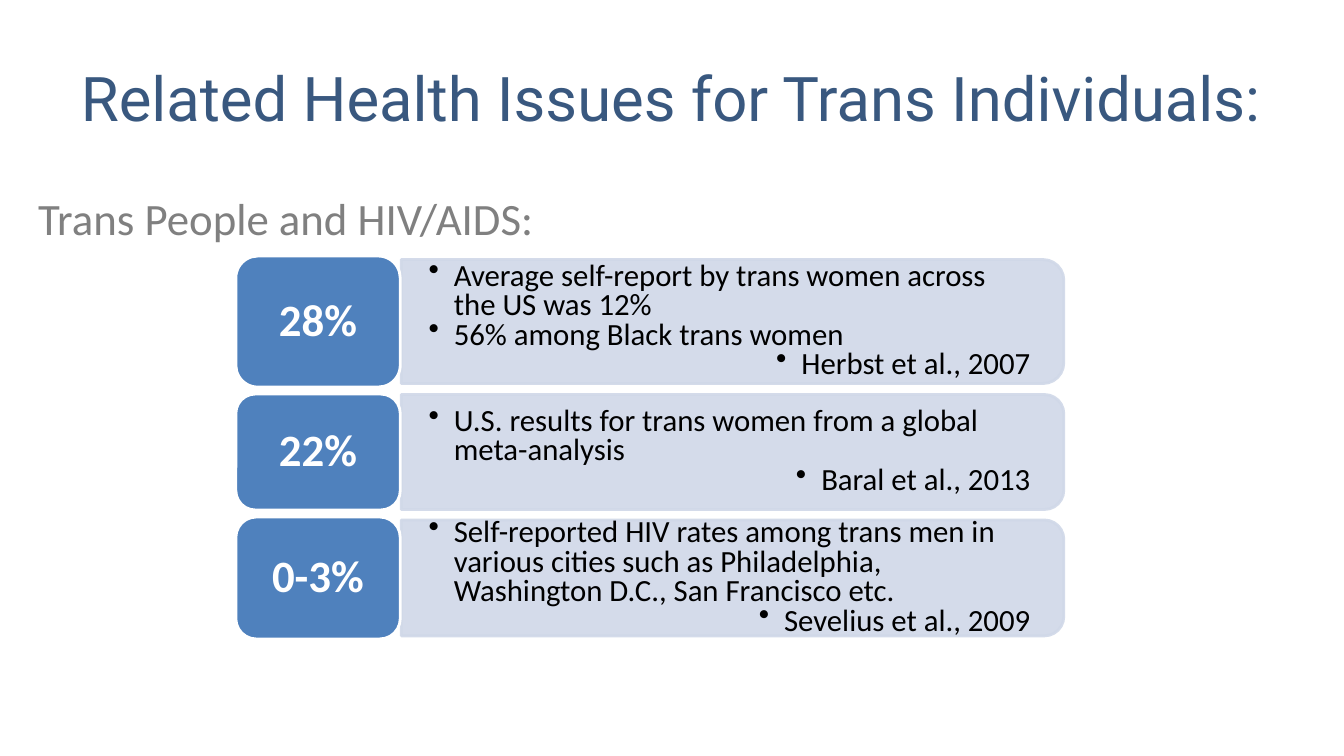
from dataclasses import dataclass

import lxml.etree
import pptx
import pptx.dml.color
import pptx.enum.shapes
import pptx.enum.text
import pptx.oxml.ns
import pptx.shapes.autoshape
import pptx.slide
import pptx.text.text
import pptx.util

Align = pptx.enum.text.PP_ALIGN
Anchor = pptx.enum.text.MSO_ANCHOR
Preset = pptx.enum.shapes.MSO_SHAPE
SLIDE_WIDTH = pptx.util.Inches(13.33)
SLIDE_HEIGHT = pptx.util.Inches(7.5)


@dataclass(frozen=True)
class Theme:
    heading_font: str = "Roboto"
    body_font: str = "Calibri"
    heading_size: int = 44
    large_size: int = 32
    finding_size: int = 22
    heading: str = "39587F"
    topic: str = "808080"
    rate_fill: str = "4F81BD"
    rate_text: str = "FFFFFF"
    panel: str = "D0D8E8"
    finding: str = "000000"
    outline_width: int = 2
    panel_opacity: int = 90


@dataclass(frozen=True)
class Area:
    """Percentages of the slide's width and height."""

    left: float
    top: float
    width: float
    height: float

    def emu(self) -> tuple[int, int, int, int]:
        return (across(self.left), down(self.top), across(self.width), down(self.height))


@dataclass(frozen=True)
class Statistic:
    rate: str
    findings: tuple[str, ...]
    citation: str
    rate_height: float
    panel_height: float


THEME = Theme()
HEADING_AREA = Area(2.1, 3.33, 95.72, 18.93)
TOPIC_AREA = Area(2.1, 24.53, 95.72, 60.13)
RATE_LEFT, RATE_WIDTH = 17.55, 12.23
PANEL_LEFT, PANEL_WIDTH = 29.86, 49.29
FINDINGS_WIDTH, FINDINGS_TRIM = 48.84, 1.5
FIRST_ROW, ROW_GAP = 33.87, 0.93
INSET_ACROSS, INSET_DOWN, BULLET_INDENT = 2.03, 1.87, 1.88
STATISTICS = (
    Statistic(
        "28%",
        ("Average self-report by trans women across the US was 12%", "56% among Black trans women"),
        "Herbst et al., 2007", 17.33, 16.4,
    ),
    Statistic(
        "22%",
        ("U.S. results for trans women from a global meta-analysis",),
        "Baral et al., 2013", 15.33, 15.2,
    ),
    Statistic(
        "0-3%",
        ("Self-reported HIV rates among trans men in various cities such as "
         "Philadelphia, Washington D.C., San Francisco etc.",),
        "Sevelius et al., 2009", 16.13, 15.33,
    ),
)


def across(percent: float) -> int:
    return round(SLIDE_WIDTH * percent / 100)


def down(percent: float) -> int:
    return round(SLIDE_HEIGHT * percent / 100)


def rgb(colour: str) -> pptx.dml.color.RGBColor:
    return pptx.dml.color.RGBColor.from_string(colour)


def style(paragraph: pptx.text.text._Paragraph, font: str, size: int, colour: str,
          bold: bool = False) -> None:
    for run in paragraph.runs:
        run.font.name = font
        run.font.size = pptx.util.Pt(size)
        run.font.color.rgb = rgb(colour)
        run.font.bold = bold


def add_text(slide: pptx.slide.Slide, area: Area, anchor: Anchor) -> pptx.text.text.TextFrame:
    frame = slide.shapes.add_textbox(*area.emu()).text_frame
    frame.word_wrap = True
    frame.vertical_anchor = anchor
    return frame


def add_block(slide: pptx.slide.Slide, preset: Preset, bounds: tuple[int, int, int, int],
              fill: str, outline: str) -> pptx.shapes.autoshape.Shape:
    block = slide.shapes.add_shape(preset, *bounds)
    block.shadow.inherit = False
    block.fill.solid()
    block.fill.fore_color.rgb = rgb(fill)
    block.line.color.rgb = rgb(outline)
    block.line.width = pptx.util.Pt(THEME.outline_width)
    return block


def add_panel(slide: pptx.slide.Slide, area: Area) -> None:
    left, top, width, height = area.emu()
    shift = (width - height) // 2
    panel = add_block(slide, Preset.ROUND_2_SAME_RECTANGLE,
                      (left + shift, top - shift, height, width), THEME.panel, THEME.panel)
    panel.rotation = 90
    qn = pptx.oxml.ns.qn
    for colour in panel._element.spPr.iter(qn("a:srgbClr")):
        lxml.etree.SubElement(colour, qn("a:alpha"), val=str(THEME.panel_opacity * 1000))


def add_bullet(paragraph: pptx.text.text._Paragraph) -> None:
    properties = paragraph._p.get_or_add_pPr()
    properties.set("marL", str(across(BULLET_INDENT)))
    properties.set("indent", str(-across(BULLET_INDENT)))
    lxml.etree.SubElement(properties, pptx.oxml.ns.qn("a:buChar"), char="•")


def add_findings(slide: pptx.slide.Slide, area: Area, statistic: Statistic) -> None:
    frame = add_text(slide, area, Anchor.MIDDLE)
    frame.margin_left = frame.margin_right = across(INSET_ACROSS)
    frame.margin_top = frame.margin_bottom = down(INSET_DOWN)
    frame.text = "\n".join((*statistic.findings, statistic.citation))
    for paragraph in frame.paragraphs:
        paragraph.level = 1
        paragraph.alignment = Align.LEFT
        paragraph.line_spacing = 0.8
        add_bullet(paragraph)
        style(paragraph, THEME.body_font, THEME.finding_size, THEME.finding)
    frame.paragraphs[-1].alignment = Align.RIGHT


def add_rate(slide: pptx.slide.Slide, area: Area, rate: str) -> None:
    badge = add_block(slide, Preset.ROUNDED_RECTANGLE, area.emu(), THEME.rate_fill, THEME.rate_text)
    badge.text_frame.text = rate
    badge.text_frame.vertical_anchor = Anchor.MIDDLE
    paragraph = badge.text_frame.paragraphs[0]
    paragraph.alignment = Align.CENTER
    paragraph.line_spacing = 0.9
    style(paragraph, THEME.body_font, THEME.large_size, THEME.rate_text, True)


def add_statistic(slide: pptx.slide.Slide, top: float, statistic: Statistic) -> None:
    panel_top = top + (statistic.rate_height - statistic.panel_height) / 2
    add_panel(slide, Area(PANEL_LEFT, panel_top, PANEL_WIDTH, statistic.panel_height))
    add_findings(slide, Area(PANEL_LEFT, panel_top + FINDINGS_TRIM / 2, FINDINGS_WIDTH,
                             statistic.panel_height - FINDINGS_TRIM), statistic)
    add_rate(slide, Area(RATE_LEFT, top, RATE_WIDTH, statistic.rate_height), statistic.rate)


def main() -> None:
    deck = pptx.Presentation()
    deck.slide_width, deck.slide_height = SLIDE_WIDTH, SLIDE_HEIGHT
    slide = deck.slides.add_slide(deck.slide_layouts[6])

    heading = add_text(slide, HEADING_AREA, Anchor.MIDDLE)
    heading.text = "Related Health Issues for Trans Individuals:"
    heading.paragraphs[0].alignment = Align.CENTER
    style(heading.paragraphs[0], THEME.heading_font, THEME.heading_size, THEME.heading)

    topic = add_text(slide, TOPIC_AREA, Anchor.TOP)
    topic.text = "Trans People and HIV/AIDS:"
    style(topic.paragraphs[0], THEME.body_font, THEME.large_size, THEME.topic)

    top = FIRST_ROW
    for statistic in STATISTICS:
        add_statistic(slide, top, statistic)
        top += statistic.rate_height + ROW_GAP

    deck.save("out.pptx")


if __name__ == "__main__":
    main()
